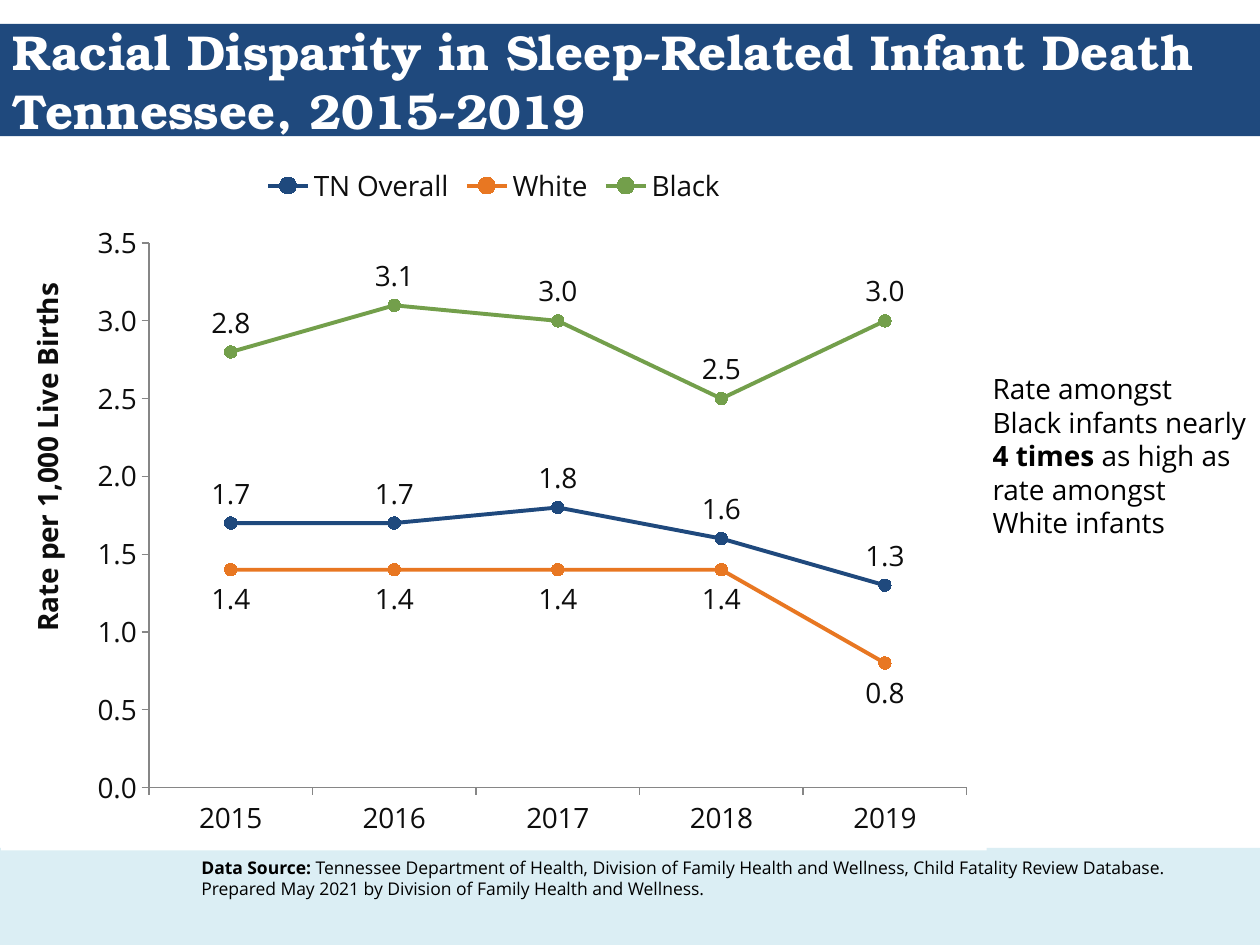
from lxml import etree
from pptx import Presentation
from pptx.chart.data import CategoryChartData
from pptx.dml.color import RGBColor
from pptx.enum import chart as charts, shapes, text
from pptx.oxml import parse_xml
from pptx.oxml.ns import nsdecls, qn
from pptx.util import Inches, Pt

NAVY, ORANGE, GREEN = "1F497D", "E87722", "739F4B"
PALE, WHITE, BLACK, INK, GRAY = "DBEEF4", "FFFFFF", "000000", "0D0D0D", "868686"
BODY_FONT, TITLE_FONT = "Open Sans", "TeX Gyre Bonum"

YEARS = ["2015", "2016", "2017", "2018", "2019"]
ABOVE, BELOW = charts.XL_LABEL_POSITION.ABOVE, charts.XL_LABEL_POSITION.BELOW
RATES = [
    ("TN Overall", [1.7, 1.7, 1.8, 1.6, 1.3], NAVY, ABOVE),
    ("White", [1.4, 1.4, 1.4, 1.4, 0.8], ORANGE, BELOW),
    ("Black", [2.8, 3.1, 3.0, 2.5, 3.0], GREEN, ABOVE),
]


def color(code):
    return RGBColor.from_string(code)


def style_font(font, size, code, name=BODY_FONT, bold=None):
    font.size, font.name, font.bold = Pt(size), name, bold
    font.color.rgb = color(code)


def paint(fill, code):
    fill.solid()
    fill.fore_color.rgb = color(code)


def add_band(page, left, top, width, height, code):
    band = page.shapes.add_shape(
        shapes.MSO_SHAPE.RECTANGLE, Inches(left), Inches(top), Inches(width), Inches(height))
    band.shadow.inherit = False
    paint(band.fill, code)
    band.line.fill.background()
    return band


def add_header(page, left, top, width, height):
    band = add_band(page, left, top, width, height - 0.01, NAVY)
    title = page.shapes.title
    title.element.addprevious(band.element)
    title.left, title.top = Inches(left), Inches(top)
    title.width, title.height = Inches(width), Inches(height)
    frame = title.text_frame
    frame.auto_size = text.MSO_AUTO_SIZE.NONE
    frame.vertical_anchor = text.MSO_ANCHOR.MIDDLE
    frame.text = "Racial Disparity in Sleep-Related Infant Death\vTennessee, 2015-2019"
    para = frame.paragraphs[0]
    para.alignment = text.PP_ALIGN.LEFT
    style_font(para.font, 28, WHITE, TITLE_FONT, True)


def add_text(page, left, top, width, height, size, spans):
    """Add one wrapped paragraph made of (words, bold) spans."""
    box = page.shapes.add_textbox(Inches(left), Inches(top), Inches(width), Inches(height))
    box.text_frame.word_wrap = True
    para = box.text_frame.paragraphs[0]
    style_font(para.font, size, BLACK)
    for words, bold in spans:
        span = para.add_run()
        span.text = words
        span.font.bold = bold


def add_footer(page, left, top, width, height):
    add_band(page, left, top, width, height, PALE)
    add_text(page, left + 1.5, top + 0.02, width - 1.67, height - 0.03, 10, [
        ("Data Source: ", True),
        ("Tennessee Department of Health, Division of Family Health and Wellness, "
         "Child Fatality Review Database. Prepared May 2021 by Division of Family "
         "Health and Wellness.", False),
    ])


def set_layout(parent, index, **fractions):
    """Place a chart part by fractions of the chart's size."""
    for old in parent.findall(qn("c:layout")):
        parent.remove(old)
    layout = etree.Element(qn("c:layout"))
    manual = etree.SubElement(layout, qn("c:manualLayout"))
    if "w" in fractions:
        etree.SubElement(manual, qn("c:layoutTarget"), val="inner")
    for name in ("xMode", "yMode"):
        etree.SubElement(manual, qn(f"c:{name}"), val="edge")
    for name, value in fractions.items():
        etree.SubElement(manual, qn(f"c:{name}"), val=str(value))
    parent.insert(index, layout)


def style_axis(axis):
    axis.has_major_gridlines = False
    axis.major_tick_mark = charts.XL_TICK_MARK.OUTSIDE
    axis.minor_tick_mark = charts.XL_TICK_MARK.NONE
    axis.format.line.color.rgb = color(GRAY)
    axis.format.line.width = Pt(0.75)
    style_font(axis.tick_labels.font, 16, INK)


def style_series(series, code, position):
    series.smooth = False
    series.format.line.color.rgb = color(code)
    series.format.line.width = Pt(2.25)
    marker = series.marker
    marker.style, marker.size = charts.XL_MARKER_STYLE.CIRCLE, 7
    paint(marker.format.fill, code)
    marker.format.line.color.rgb = color(code)
    labels = series.data_labels
    labels.show_value, labels.position = True, position
    labels.number_format, labels.number_format_is_linked = "0.0", False
    style_font(labels.font, 16, INK)


def add_rate_chart(page, left, top, width, height):
    data = CategoryChartData(number_format="0.0")
    data.categories = YEARS
    for name, values, _, _ in RATES:
        data.add_series(name, values)
    chart = page.shapes.add_chart(
        charts.XL_CHART_TYPE.LINE_MARKERS, Inches(left), Inches(top),
        Inches(width), Inches(height), data).chart
    style_font(chart.font, 10, BLACK, "Calibri")
    chart.has_title = False
    chart.has_legend = True
    chart.legend.position = charts.XL_LEGEND_POSITION.TOP
    chart.legend.include_in_layout = False
    style_font(chart.legend.font, 16, INK)

    plot = chart.plots[0]
    plot.vary_by_categories = False
    for series, (_, _, code, position) in zip(plot.series, RATES):
        style_series(series, code, position)

    rates = chart.value_axis
    for axis in (chart.category_axis, rates):
        style_axis(axis)
    rates.minimum_scale, rates.maximum_scale, rates.major_unit = 0, 3.5, 0.5
    rates.tick_labels.number_format = "0.0"
    rates.tick_labels.number_format_is_linked = False
    title = rates.axis_title
    title.text_frame.text = "Rate per 1,000 Live Births"
    style_font(title.text_frame.paragraphs[0].font, 16, INK, bold=True)

    root = chart.element
    set_layout(title._element, 1, x=0.02, y=0.18)
    set_layout(root.find(".//" + qn("c:plotArea")), 0, x=0.15, y=0.13, w=0.83, h=0.78)
    root.find(qn("c:chart")).addnext(parse_xml(
        f'<c:spPr {nsdecls("c", "a")}><a:solidFill><a:srgbClr val="{WHITE}"/>'
        "</a:solidFill><a:ln><a:noFill/></a:ln></c:spPr>"))


def main():
    deck = Presentation()
    deck.slide_width, deck.slide_height = Inches(10), Inches(7.5)
    page = deck.slides.add_slide(deck.slide_layouts[5])
    add_header(page, 0, 0.19, 10, 0.9)
    add_footer(page, 0, 6.73, 10, 0.77)
    add_text(page, 7.78, 2.9, 2.22, 1.45, 16, [
        ("Rate amongst Black infants nearly ", False),
        ("4 times ", True),
        ("as high as rate amongst White infants", False),
    ])
    add_rate_chart(page, 0.01, 1.21, 7.82, 5.54)
    deck.save("out.pptx")


if __name__ == "__main__":
    main()
